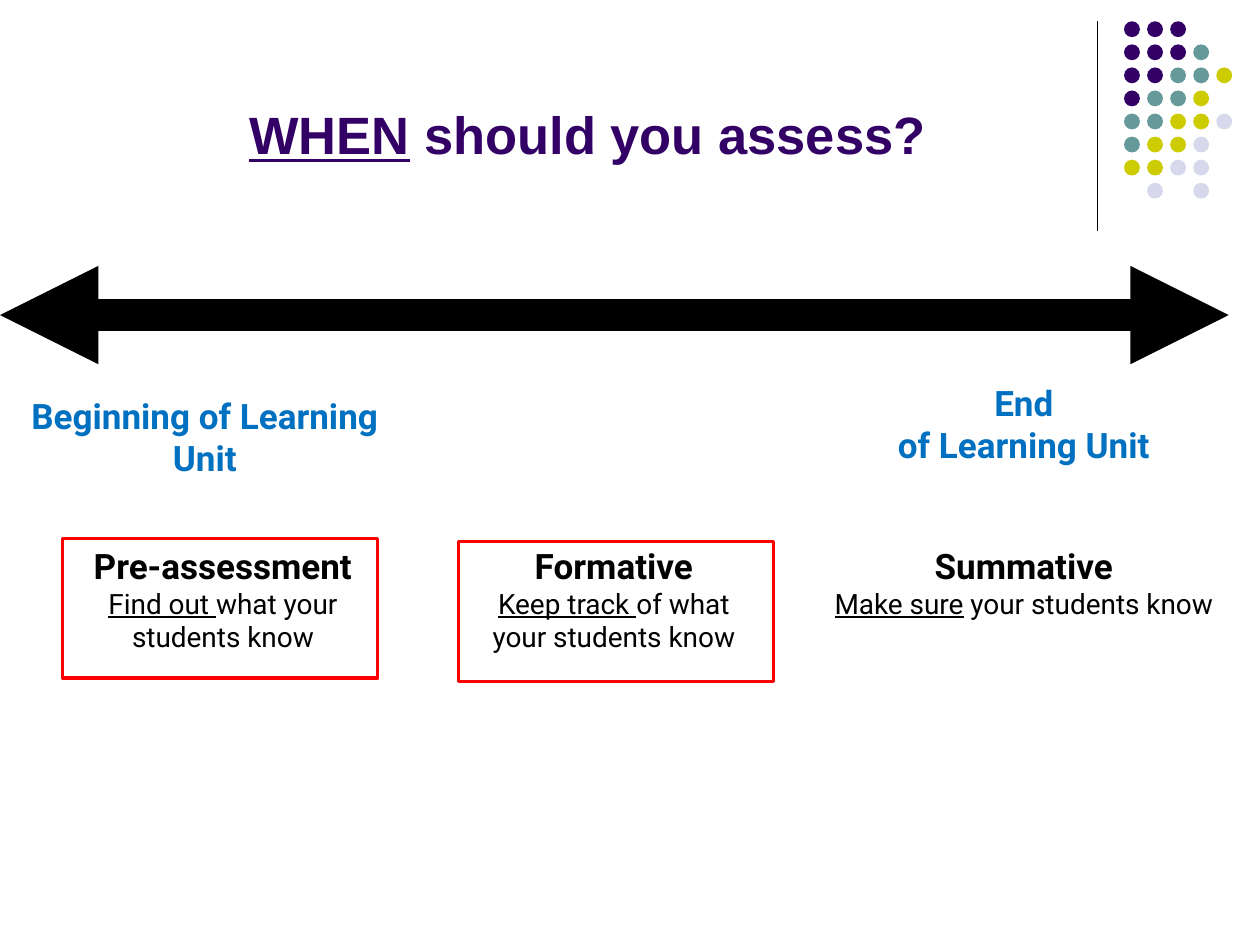
from lxml import etree
from pptx import Presentation
from pptx.dml.color import RGBColor
from pptx.enum import shapes, text
from pptx.oxml import ns
from pptx.util import Cm, Pt

PURPLE, TEAL, OLIVE, PALE = "330066", "669999", "CCCC00", "D8D8EC"
BLACK, BLUE, RED = "000000", "0070C0", "FF0000"

DOT_COLOURS = {"P": PURPLE, "T": TEAL, "O": OLIVE, "L": PALE}
DOT_ROWS = ["PPP", "PPPT", "PPTTO", "PTTO", "TTOOL", "TOOL", "OOLL", ".L.L"]
DOT_LEFT, DOT_TOP, DOT_SIZE = 22.66, 0.43, 0.32
DOT_PITCH = 1.86 / 4


def colour(hex_string):
    return RGBColor.from_string(hex_string)


class SlideBuilder:
    """Holds the current slide and its body font; lengths are centimetres."""

    def __init__(self, slide, font="Roboto"):
        self.slide = slide
        self.font = font

    def label(self, left, top, width, height, paragraphs, font=None,
              anchor=text.MSO_ANCHOR.TOP, fit=text.MSO_AUTO_SIZE.SHAPE_TO_FIT_TEXT):
        """Add centred text; each paragraph is a list of (words, size, colour, bold, underline)."""
        box = self.slide.shapes.add_textbox(Cm(left), Cm(top), Cm(width), Cm(height))
        frame = box.text_frame
        frame.word_wrap = True
        frame.auto_size = fit
        frame.vertical_anchor = anchor
        for index, pieces in enumerate(paragraphs):
            paragraph = frame.add_paragraph() if index else frame.paragraphs[0]
            paragraph.alignment = text.PP_ALIGN.CENTER
            for words, size, ink, bold, underline in pieces:
                run = paragraph.add_run()
                run.text = words
                run.font.name = font or self.font
                run.font.size = Pt(size)
                run.font.color.rgb = colour(ink)
                run.font.bold = bold
                run.font.underline = underline

    def dot(self, left, top, size, fill):
        dot = self.slide.shapes.add_shape(
            shapes.MSO_SHAPE.OVAL, Cm(left), Cm(top), Cm(size), Cm(size))
        dot.shadow.inherit = False
        dot.fill.solid()
        dot.fill.fore_color.rgb = colour(fill)
        dot.line.fill.background()

    def frame(self, left, top, width, height, ink, weight):
        frame = self.slide.shapes.add_shape(
            shapes.MSO_SHAPE.RECTANGLE, Cm(left), Cm(top), Cm(width), Cm(height))
        frame.shadow.inherit = False
        frame.fill.background()
        frame.line.color.rgb = colour(ink)
        frame.line.width = Pt(weight)

    def line(self, start, end, weight, arrows=False):
        line = self.slide.shapes.add_connector(
            shapes.MSO_CONNECTOR.STRAIGHT, *map(Cm, start + end))
        line.line.color.rgb = colour(BLACK)
        line.line.width = Pt(weight)
        if arrows:
            outline = line.line._get_or_add_ln()
            for tag in ("a:headEnd", "a:tailEnd"):
                etree.SubElement(outline, ns.qn(tag), type="triangle")
        etree.SubElement(line._element.spPr, ns.qn("a:effectLst"))


def main():
    deck = Presentation()
    deck.slide_width, deck.slide_height = Cm(25.4), Cm(19.05)
    builder = SlideBuilder(deck.slides.add_slide(deck.slide_layouts[6]))

    builder.line((22.12, 0.43), (22.12, 4.65), 0.75)
    for row, pattern in enumerate(DOT_ROWS):
        for column, key in enumerate(pattern):
            if key in DOT_COLOURS:
                builder.dot(DOT_LEFT + column * DOT_PITCH, DOT_TOP + row * DOT_PITCH,
                            DOT_SIZE, DOT_COLOURS[key])

    builder.label(1.37, -0.15, 20.96, 3.6,
                  [[("WHEN", 30, PURPLE, True, True),
                    (" should you assess?", 30, PURPLE, True, False)]],
                  font="Arial", anchor=text.MSO_ANCHOR.BOTTOM, fit=text.MSO_AUTO_SIZE.NONE)

    builder.line((0, 6.35), (24.77, 6.35), 18.75, arrows=True)
    timeline_ends = [
        (0, 7.82, ["Beginning of Learning Unit"]),
        (16.51, 7.57, ["End", "of Learning Unit"]),
    ]
    for left, top, lines in timeline_ends:
        builder.label(left, top, 8.26, 1.96,
                      [[(words, 20, BLUE, True, False)] for words in lines])

    assessments = [
        (1.37, 6.25, "Pre-assessment", "Find out ", "what your students know"),
        (9.25, 6.25, "Formative", "Keep track ", "of what your students know"),
        (16.51, 8.26, "Summative", "Make sure", " your students know"),
    ]
    for left, width, stage, action, rest in assessments:
        builder.label(left, 10.85, width, 2.49,
                      [[(stage, 20, BLACK, True, False)],
                       [(action, 16, BLACK, False, True), (rest, 16, BLACK, False, False)]])

    for left, top in [(1.27, 10.85), (9.25, 10.92)]:
        builder.frame(left, top, 6.35, 2.82, RED, 1.75)

    deck.save("out.pptx")


if __name__ == "__main__":
    main()
